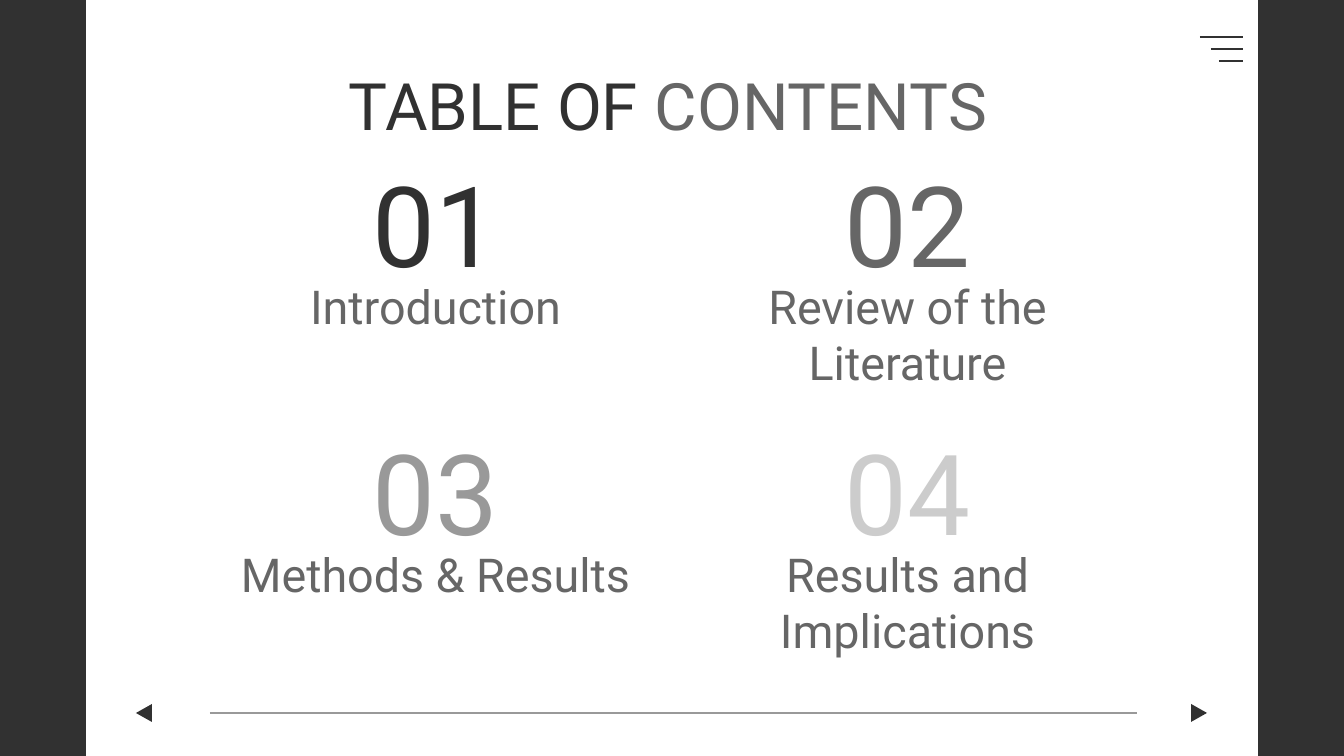
import pptx
import pptx.util
from pptx.dml.color import RGBColor
from pptx.enum.shapes import MSO_CONNECTOR, MSO_SHAPE
from pptx.enum.text import MSO_ANCHOR, PP_ALIGN
from pptx.oxml.ns import qn

PX = 914400 / 134.4
WIDTH, HEIGHT = 1344, 756
CHARCOAL = RGBColor(0x31, 0x31, 0x31)
DARK_GRAY = RGBColor(0x66, 0x66, 0x66)
MID_GRAY = RGBColor(0x99, 0x99, 0x99)
LIGHT_GRAY = RGBColor(0xCC, 0xCC, 0xCC)


def px(*lengths):
    return [round(length * PX) for length in lengths]


def add_text(box, runs, size, inset=0):
    """Add centred text from (wording, colour) runs."""
    frame = slide.shapes.add_textbox(*px(*box)).text_frame
    margin = px(inset)[0]
    frame_format = {
        "word_wrap": True,
        "vertical_anchor": MSO_ANCHOR.TOP,
        "margin_left": margin,
        "margin_top": margin,
        "margin_right": margin,
        "margin_bottom": margin,
    }
    for name, value in frame_format.items():
        setattr(frame, name, value)
    paragraph = frame.paragraphs[0]
    paragraph.alignment = PP_ALIGN.CENTER
    for wording, color in runs:
        run = paragraph.add_run()
        run.text = wording
        for name, value in {"name": "Roboto", "size": pptx.util.Pt(size)}.items():
            setattr(run.font, name, value)
        run.font.color.rgb = color


presentation = pptx.Presentation()
presentation.slide_width, presentation.slide_height = px(WIDTH, HEIGHT)
slide = presentation.slides.add_slide(presentation.slide_layouts[6])

# Side bars and navigation arrows
SIDE = 86
solid_shapes = [
    (MSO_SHAPE.RECTANGLE, (0, 0, SIDE, HEIGHT), 0),
    (MSO_SHAPE.RECTANGLE, (WIDTH - SIDE, 0, SIDE, HEIGHT), 0),
    (MSO_SHAPE.ISOSCELES_TRIANGLE, (135, 705, 18, 16), 270),
    (MSO_SHAPE.ISOSCELES_TRIANGLE, (1190, 705, 18, 16), 90),
]
for kind, box, rotation in solid_shapes:
    shape = slide.shapes.add_shape(kind, *px(*box))
    shape.rotation = rotation
    shape.shadow.inherit = False
    shape.fill.solid()
    shape.fill.fore_color.rgb = CHARCOAL
    shape.line.fill.background()

# Footer rule and menu icon
lines = [(210, 1137, 713, MID_GRAY, 0.75)]
for index, left in enumerate((1200, 1211, 1219)):
    lines.append((left, 1243, 37 + 12 * index, CHARCOAL, 1.5))
for left, right, y, color, weight in lines:
    connector = slide.shapes.add_connector(MSO_CONNECTOR.STRAIGHT, *px(left, y, right, y))
    connector.line.color.rgb = color
    connector.line.width = pptx.util.Pt(weight)
    properties = connector._element.spPr
    properties.append(properties.makeelement(qn("a:effectLst"), {}))

# Title and the two-by-two grid of sections
add_text((121, 52, 1094, 77), [("TABLE OF ", CHARCOAL), ("CONTENTS", DARK_GRAY)], 35, inset=13)

sections = [
    ("Introduction", CHARCOAL),
    ("Review of the Literature", DARK_GRAY),
    ("Methods & Results", MID_GRAY),
    ("Results and Implications", LIGHT_GRAY),
]
for index, (label, number_color) in enumerate(sections):
    row, column = divmod(index, 2)
    x, y = 472 * column, 268 * row
    add_text((345 + x, 142 + y, 181, 135), [(f"{index + 1:02d}", number_color)], 60, inset=13)
    add_text((224 + x, 278 + y, 423, 59), [(label, DARK_GRAY)], 25)

presentation.save("out.pptx")
